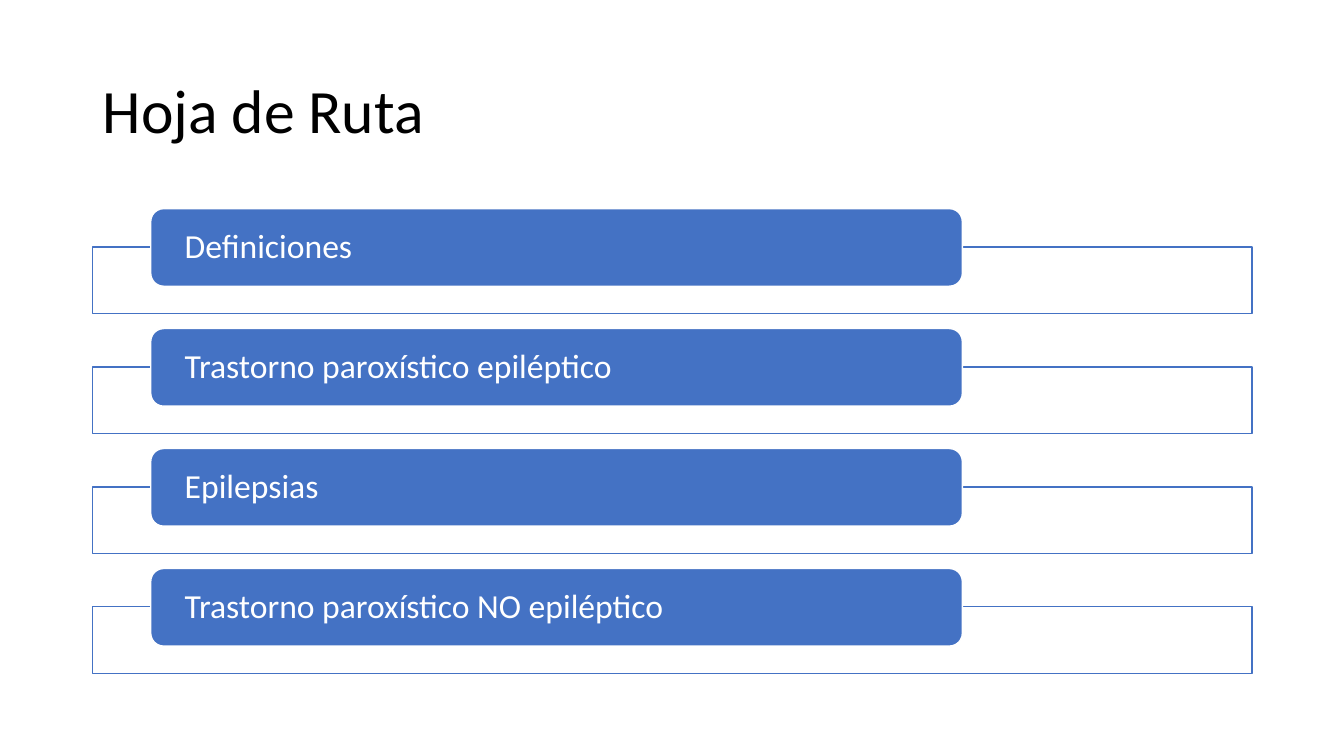
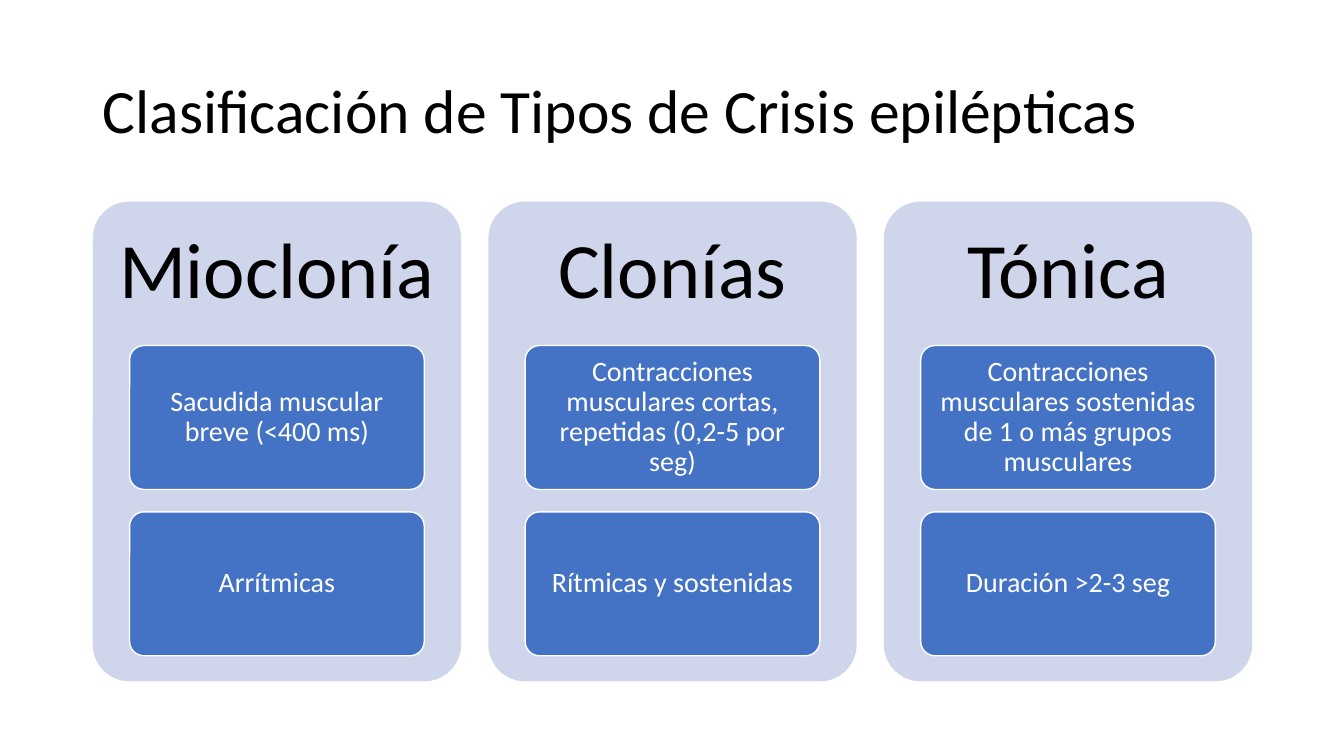
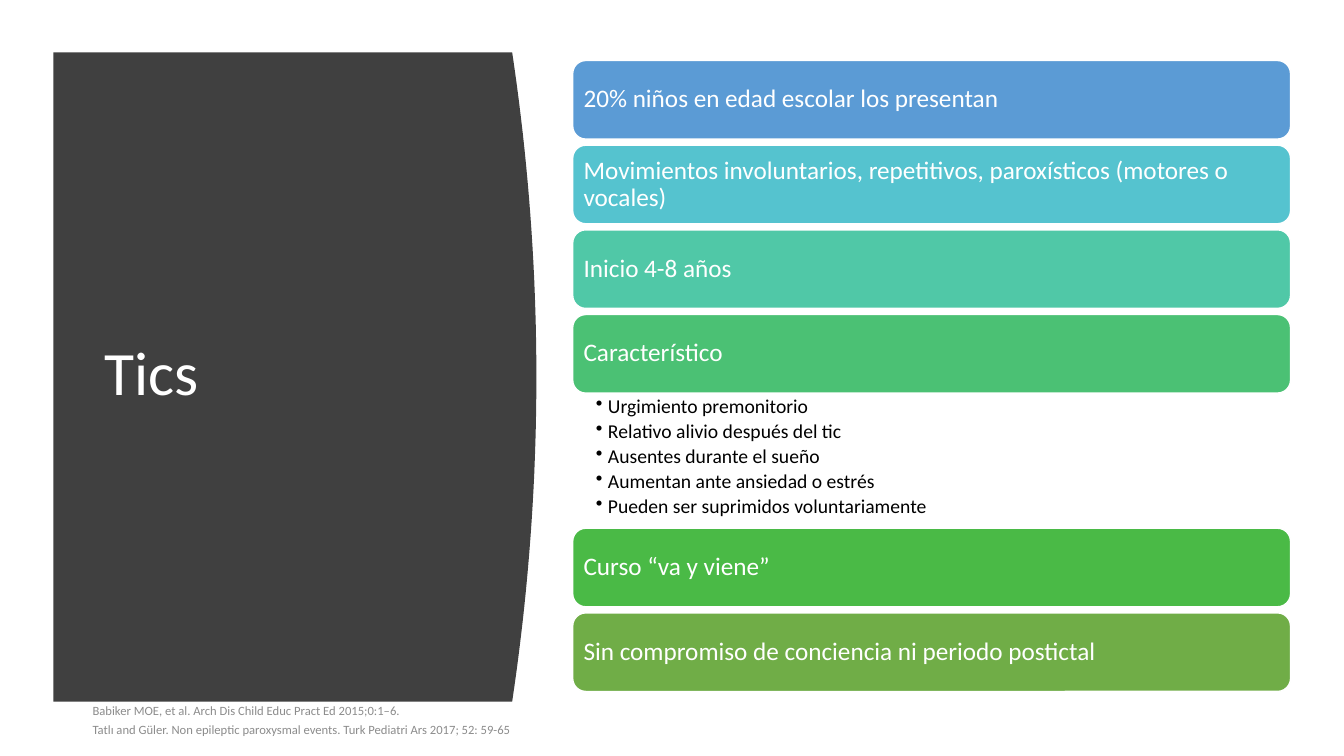
from dataclasses import dataclass

from lxml import etree
from pptx import Presentation
from pptx.dml.color import RGBColor
from pptx.enum.shapes import MSO_SHAPE
from pptx.enum.text import MSO_ANCHOR, PP_ALIGN
from pptx.oxml.ns import qn
from pptx.util import Inches, Pt

RECT, ROUNDED = MSO_SHAPE.RECTANGLE, MSO_SHAPE.ROUNDED_RECTANGLE
TOP, MIDDLE = MSO_ANCHOR.TOP, MSO_ANCHOR.MIDDLE
LEFT, CENTER = PP_ALIGN.LEFT, PP_ALIGN.CENTER


@dataclass(frozen=True)
class Theme:
    font: str = "Calibri"
    ink: str = "000000"
    paper: str = "FFFFFF"
    accent: str = "4472C4"
    tint: str = "CFD5EA"
    dark: str = "404040"
    muted: str = "8C8C8C"
    title: int = 44
    heading: int = 56
    topic: int = 24
    card: int = 20
    fact: int = 18
    detail: int = 14
    source: int = 9
    spacing: float = 0.9


THEME = Theme()
WIDTH, HEIGHT = 13.33, 7.5
MARGIN, BODY = 0.92, 11.5
TITLE_BOX = (MARGIN, 0.4, BODY, 1.45)
TITLE_INSETS = (0.1, 0.05, 0.1, 0.05)

ROADMAP_TITLE = "Hoja de Ruta"
ROADMAP = [
    "Definiciones",
    "Trastorno paroxístico epiléptico",
    "Epilepsias",
    "Trastorno paroxístico NO epiléptico",
]

SEIZURES_TITLE = "Clasificación de Tipos de Crisis epilépticas"
SEIZURES = {
    "Mioclonía": ["Sacudida muscular breve (<400 ms)", "Arrítmicas"],
    "Clonías": [
        "Contracciones musculares cortas, repetidas (0,2-5 por seg)",
        "Rítmicas y sostenidas",
    ],
    "Tónica": [
        "Contracciones musculares sostenidas de 1 o más grupos musculares",
        "Duración >2-3 seg",
    ],
}

TICS_TITLE = "Tics"
TICS = [
    ("20% niños en edad escolar los presentan", "5B9BD5", []),
    ("Movimientos involuntarios, repetitivos, paroxísticos (motores o vocales)", "55C3CF", []),
    ("Inicio 4-8 años", "50C8A7", []),
    ("Característico", "4BC174", [
        "Urgimiento premonitorio",
        "Relativo alivio después del tic",
        "Ausentes durante el sueño",
        "Aumentan ante ansiedad o estrés",
        "Pueden ser suprimidos voluntariamente",
    ]),
    ("Curso “va y viene”", "4ABA46", []),
    ("Sin compromiso de conciencia ni periodo postictal", "70AD47", []),
]
SOURCES = [
    "Babiker MOE, et al. Arch Dis Child Educ Pract Ed 2015;0:1–6.",
    "Tatlı and Güler. Non epileptic paroxysmal events. Turk Pediatri Ars 2017; 52: 59-65",
]


def paint(shape, fill, line=None):
    shape.shadow.inherit = False
    shape.fill.solid()
    shape.fill.fore_color.rgb = RGBColor.from_string(fill)
    if line:
        shape.line.color.rgb = RGBColor.from_string(line)
        shape.line.width = Pt(1)
    else:
        shape.line.fill.background()


def add_bullet(paragraph, indent):
    properties = paragraph._p.get_or_add_pPr()
    properties.set("marL", str(Inches(indent)))
    properties.set("indent", str(-Inches(indent)))
    etree.SubElement(properties, qn("a:buChar")).set("char", "•")


def write(shape, lines, size, color, insets, anchor=MIDDLE, align=LEFT,
          spacing=THEME.spacing, after=0, bullet_indent=0):
    frame = shape.text_frame
    frame.word_wrap = True
    frame.vertical_anchor = anchor
    (frame.margin_left, frame.margin_top,
     frame.margin_right, frame.margin_bottom) = map(Inches, insets)
    for index, line in enumerate(lines):
        paragraph = frame.add_paragraph() if index else frame.paragraphs[0]
        if bullet_indent:
            add_bullet(paragraph, bullet_indent)
        paragraph.alignment = align
        paragraph.line_spacing = spacing
        paragraph.space_after = Pt(after)
        run = paragraph.add_run()
        run.text = line
        run.font.name = THEME.font
        run.font.size = Pt(size)
        run.font.color.rgb = RGBColor.from_string(color)


def add_block(slide, kind, box, fill, line=None, corner=None):
    block = slide.shapes.add_shape(kind, *map(Inches, box))
    if corner:
        block.adjustments[0] = corner
    paint(block, fill, line)
    return block


def add_text(slide, box, lines, size, color, insets=TITLE_INSETS, **style):
    write(slide.shapes.add_textbox(*map(Inches, box)), lines, size, color, insets, **style)


def new_slide(deck, title, box=TITLE_BOX, color=THEME.ink, backdrop=None):
    slide = deck.slides.add_slide(deck.slide_layouts[6])
    if backdrop:
        backdrop(slide)
    add_text(slide, box, [title], THEME.title, color)
    return slide


def build_roadmap(deck):
    slide = new_slide(deck, ROADMAP_TITLE)
    top, pitch, drop = 2.07, 1.19, 0.38
    for index, topic in enumerate(ROADMAP):
        y = top + index * pitch
        add_block(slide, RECT, (MARGIN, y + drop, BODY, 0.66), THEME.paper, THEME.accent)
        tab = add_block(slide, ROUNDED, (MARGIN + 0.05 * BODY, y, 0.7 * BODY, 0.77),
                        THEME.accent, THEME.paper)
        write(tab, [topic], THEME.topic, THEME.paper, (0.3, 0, 0.3, 0))


def build_seizures(deck):
    slide = new_slide(deck, SEIZURES_TITLE)
    top, height, gap = 2, 4.76, 0.27
    width = (BODY - gap * (len(SEIZURES) - 1)) / len(SEIZURES)
    card_height, card_pitch = 0.3 * height, 1.65
    for column, (heading, traits) in enumerate(SEIZURES.items()):
        x = MARGIN + column * (width + gap)
        add_block(slide, ROUNDED, (x, top, width, height), THEME.tint, corner=0.1)
        add_text(slide, (x, top, width, card_height), [heading], THEME.heading,
                 THEME.ink, (0.23,) * 4, align=CENTER)
        for row, trait in enumerate(traits):
            y = top + card_height + row * card_pitch
            card = add_block(slide, ROUNDED, (x + 0.1 * width, y, 0.8 * width, card_height),
                             THEME.accent, THEME.paper, corner=0.1)
            write(card, [trait], THEME.card, THEME.paper,
                  (0.06, 0.04, 0.06, 0.04), align=CENTER)


def add_curved_panel(slide):
    left, top, bottom, edge, bulge, steps = 0.53, 0.52, 6.96, 5.08, 0.24, 40
    curve = []
    for step in range(steps + 1):
        share = step / steps
        x = edge + bulge * (1 - (2 * share - 1) ** 2)
        curve.append((Inches(x), Inches(top + share * (bottom - top))))
    outline = slide.shapes.build_freeform(Inches(left), Inches(top))
    outline.add_line_segments(curve + [(Inches(left), Inches(bottom))], close=True)
    paint(outline.convert_to_shape(), THEME.dark)


def build_tics(deck):
    slide = new_slide(deck, TICS_TITLE, (0.94, 1.11, 3.74, 5.24), THEME.paper, add_curved_panel)
    add_text(slide, (0.82, 7.01, 4.5, 0.4), SOURCES, THEME.source, THEME.muted,
             (0.1, 0, 0.1, 0), anchor=TOP, spacing=0.7, after=6)
    left, y, width, bar, gap, details_height = 5.68, 0.6, 7.12, 0.78, 0.06, 1.34
    for fact, color, details in TICS:
        block = add_block(slide, ROUNDED, (left, y, width, bar), color, THEME.paper)
        write(block, [fact], THEME.fact, THEME.paper, (0.07,) * 4)
        y += bar
        if details:
            add_text(slide, (left, y, width, details_height), details, THEME.detail,
                     THEME.ink, (0.23, 0.03, 0.14, 0.03), anchor=TOP,
                     after=0.2 * THEME.detail, bullet_indent=0.12)
        y += details_height if details else gap


def main():
    """Build the three slides on seizures and tics."""
    deck = Presentation()
    deck.slide_width, deck.slide_height = Inches(WIDTH), Inches(HEIGHT)
    for build in (build_roadmap, build_seizures, build_tics):
        build(deck)
    deck.save("out.pptx")


if __name__ == "__main__":
    main()
